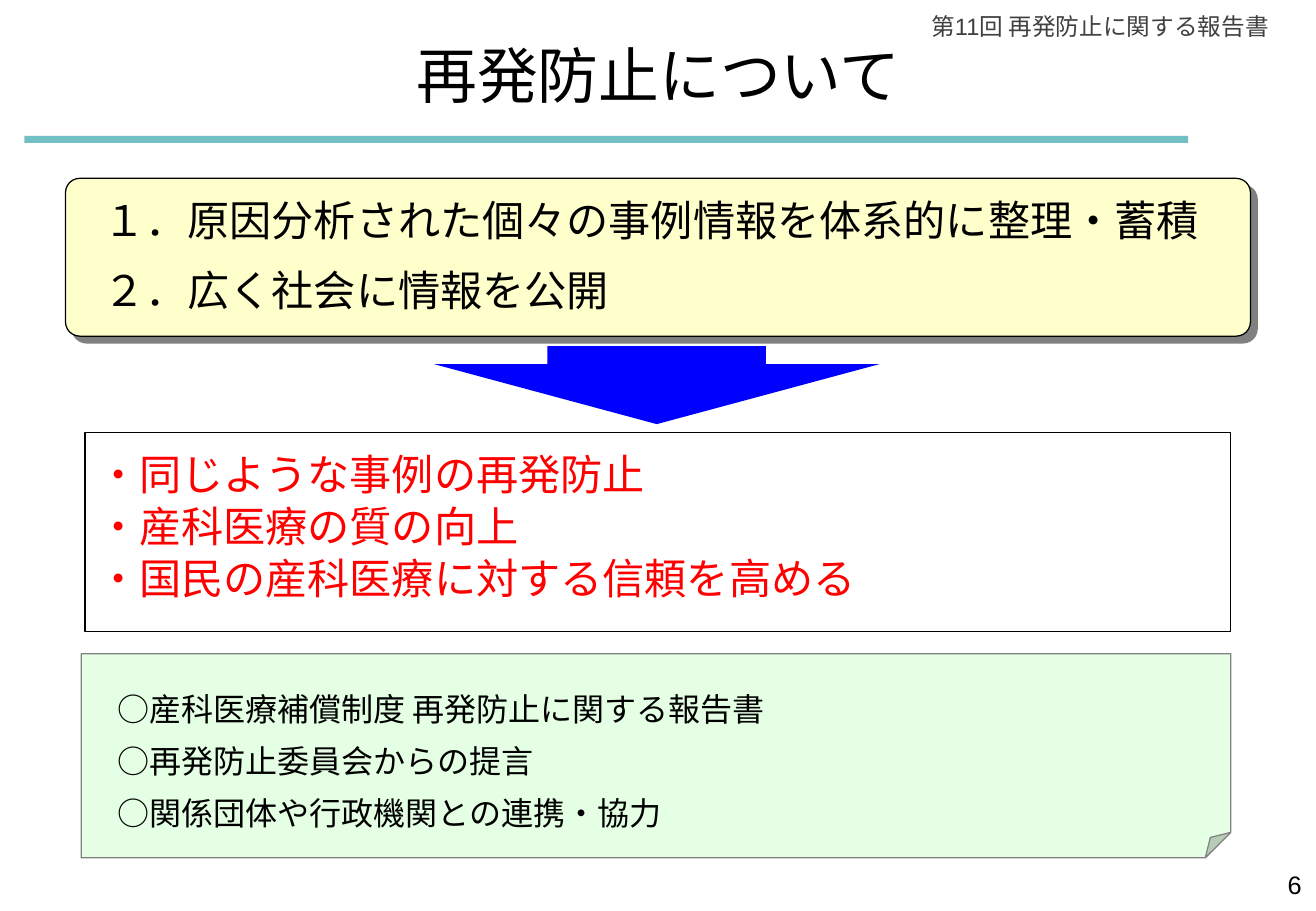
from lxml.etree import SubElement
from pptx import Presentation
from pptx.dml.color import RGBColor
from pptx.enum.shapes import MSO_SHAPE
from pptx.enum.text import MSO_ANCHOR, PP_ALIGN
from pptx.oxml.ns import qn
from pptx.util import Cm, Pt

BLACK = RGBColor(0x00, 0x00, 0x00)
DARK_GRAY = RGBColor(0x40, 0x40, 0x40)
GRAY = RGBColor(0x80, 0x80, 0x80)
RED = RGBColor(0xFF, 0x00, 0x00)
BLUE = RGBColor(0x00, 0x00, 0xFF)
TEAL = RGBColor(0x72, 0xBF, 0xC5)
CREAM = RGBColor(0xFF, 0xFF, 0xCC)
MINT = RGBColor(0xE5, 0xFF, 0xE5)

LATIN = "Arial"
JAPANESE = "Noto Sans CJK JP"

HEADER = ["第11回 再発防止に関する報告書"]
TITLE = ["再発防止について"]
ACTIVITIES = [
    "１．原因分析された個々の事例情報を体系的に整理・蓄積",
    "２．広く社会に情報を公開",
]
GOALS = [
    "・同じような事例の再発防止",
    "・産科医療の質の向上",
    "・国民の産科医療に対する信頼を高める",
]
MEASURES = [
    "○産科医療補償制度 再発防止に関する報告書",
    "○再発防止委員会からの提言",
    "○関係団体や行政機関との連携・協力",
]
PAGE_NUMBER = ["6"]

presentation = Presentation()
presentation.slide_width = Cm(27.51)
presentation.slide_height = Cm(19.05)
slide = presentation.slides.add_slide(presentation.slide_layouts[6])


def add_panel(kind, box, fill=None, line=None, adjustments=()):
    shape = slide.shapes.add_shape(kind, *map(Cm, box))
    shape.shadow.inherit = False
    for index, value in enumerate(adjustments):
        shape.adjustments[index] = value
    if fill is None:
        shape.fill.background()
    else:
        shape.fill.solid()
        shape.fill.fore_color.rgb = fill
    if line is None:
        shape.line.fill.background()
    else:
        shape.line.color.rgb = line
        shape.line.width = Pt(0.75)
    return shape


def add_hard_shadow(shape):
    effects = shape._element.spPr.find(qn("a:effectLst"))
    shadow = SubElement(effects, qn("a:outerShdw"), blurRad="0",
                        dist=str(Pt(5.7)), dir="2700000", algn="ctr", rotWithShape="0")
    SubElement(shadow, qn("a:srgbClr"), val=str(GRAY))


def set_fold(shape, ratio):
    guides = shape._element.spPr.find(qn("a:prstGeom")).get_or_add_avLst()
    for guide in list(guides):
        guides.remove(guide)
    SubElement(guides, qn("a:gd"), name="adj", fmla=f"val {round(ratio * 100000)}")


def write_lines(shape, lines, size, color, font=LATIN, align=PP_ALIGN.LEFT,
                anchor=MSO_ANCHOR.TOP, line_height=None, gap=0, hanging=0):
    frame = shape.text_frame
    frame.word_wrap = True
    frame.vertical_anchor = anchor
    for index, line in enumerate(lines):
        paragraph = frame.add_paragraph() if index else frame.paragraphs[0]
        paragraph.text = line
        paragraph.alignment = align
        if line_height:
            paragraph.line_spacing = Pt(line_height)
        if index:
            paragraph.space_before = Pt(gap)
        if hanging:
            properties = paragraph._p.get_or_add_pPr()
            properties.set("marL", str(Cm(hanging)))
            properties.set("indent", str(-Cm(hanging)))
        paragraph.font.size = Pt(size)
        paragraph.font.color.rgb = color
        paragraph.font.name = font
        if font == JAPANESE:
            defaults = paragraph._p.pPr.find(qn("a:defRPr"))
            SubElement(defaults, qn("a:ea"), typeface=font)


def add_text(box, lines, size, color, **style):
    write_lines(slide.shapes.add_textbox(*map(Cm, box)), lines, size, color, **style)


add_panel(MSO_SHAPE.RECTANGLE, (0.51, 2.84, 24.33, 0.15), TEAL)
add_text((18.75, 0.13, 8.03, 0.86), HEADER, 14, DARK_GRAY, align=PP_ALIGN.RIGHT)
add_text((2.46, 0.66, 22.61, 1.8), TITLE, 36, BLACK,
         align=PP_ALIGN.CENTER, anchor=MSO_ANCHOR.MIDDLE)

activity_panel = add_panel(MSO_SHAPE.ROUNDED_RECTANGLE, (1.37, 3.73, 24.77, 3.3),
                           CREAM, BLACK, [0.09])
add_hard_shadow(activity_panel)
add_text((1.91, 3.86, 23.67, 2.92), ACTIVITIES, 25, BLACK, font=JAPANESE,
         line_height=32, gap=10, hanging=1.04)

goal_panel = add_panel(MSO_SHAPE.RECTANGLE, (1.78, 9.04, 23.95, 4.17), line=BLACK)
write_lines(goal_panel, GOALS, 25, RED, font=JAPANESE,
            anchor=MSO_ANCHOR.MIDDLE, line_height=22, gap=8.8)

add_panel(MSO_SHAPE.DOWN_ARROW, (9.07, 7.24, 9.32, 1.63), BLUE, adjustments=[0.49, 0.77])

measure_panel = add_panel(MSO_SHAPE.FOLDED_CORNER, (1.7, 13.67, 24.03, 4.27), MINT, GRAY)
set_fold(measure_panel, 0.125)
add_text((2.21, 14.07, 21.49, 3.45), MEASURES, 19, BLACK, font=JAPANESE,
         line_height=29, gap=1.8)

add_text((21.03, 18.06, 6.43, 0.98), PAGE_NUMBER, 15, BLACK, align=PP_ALIGN.RIGHT)

presentation.save("out.pptx")
